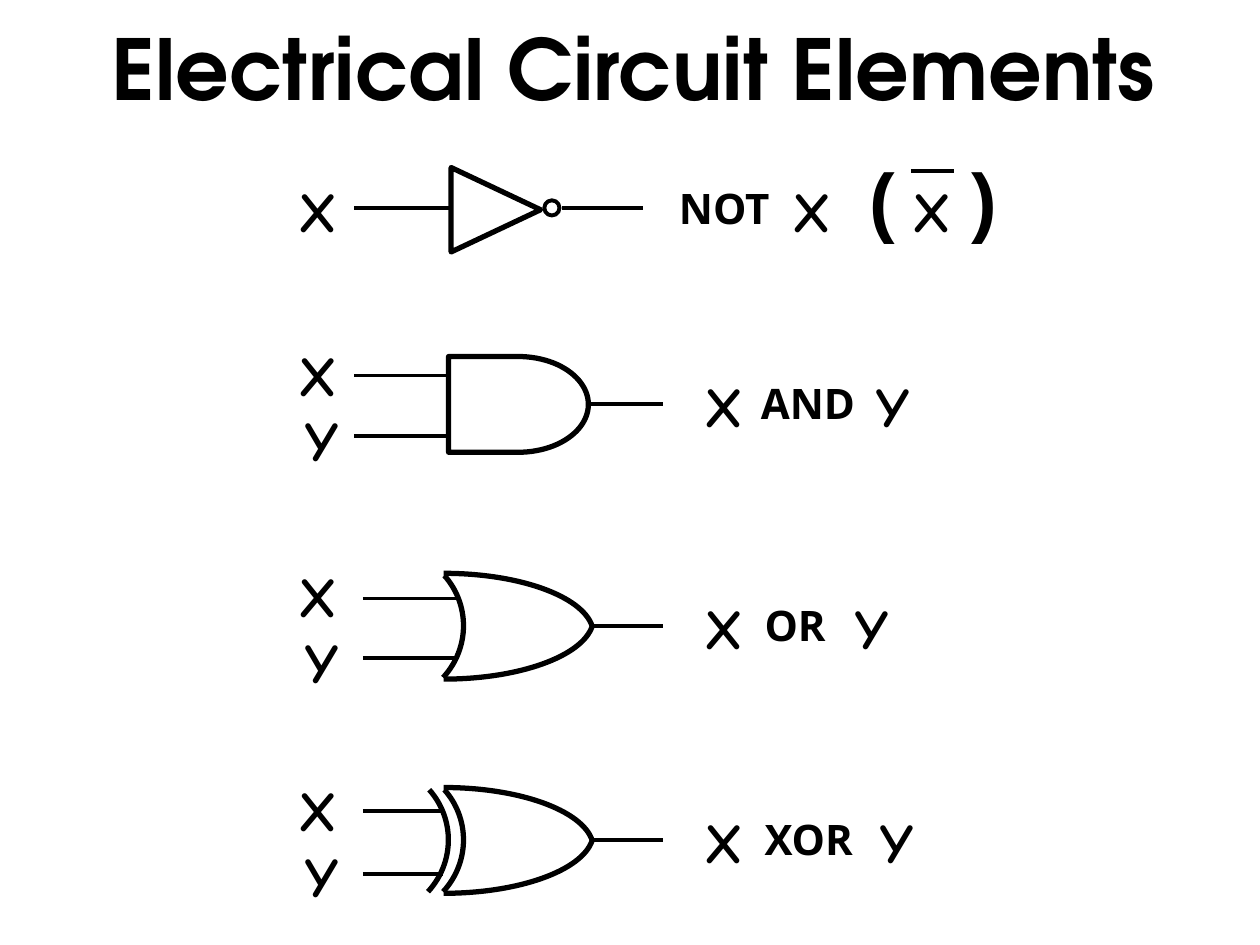
import pptx
import pptx.dml.color
import pptx.enum.shapes
import pptx.enum.text
import pptx.util
from lxml import etree

PX = 9144  # EMU per px, 100 px to the inch
BLACK = "000000"
SHAPES = pptx.enum.shapes.MSO_SHAPE
DRAWING = "http://schemas.openxmlformats.org/drawingml/2006/main"


def color(hex_text):
    return pptx.dml.color.RGBColor.from_string(hex_text)


def write_text(frame, text, *, font, size, align=None):
    paragraph = frame.paragraphs[0]
    paragraph.alignment = align
    run = paragraph.add_run()
    run.text = text
    run.font.name = font
    run.font.size = pptx.util.Pt(size)
    run.font.bold = True
    run.font.color.rgb = color(BLACK)


def add_node(parent, name, **attributes):
    return etree.SubElement(parent, f"{{{DRAWING}}}{name}", **attributes)


class CircuitSlide:
    variable_font = "Comic Neue"
    operator_font = "Noto Sans"
    wire_width = 2.25
    gate_width = 3

    def __init__(self, slide):
        self.slide = slide

    def text(self, text, left, top, width, height, *, wrap=False, **style):
        box = self.slide.shapes.add_textbox(left * PX, top * PX, width * PX, height * PX)
        box.text_frame.word_wrap = wrap
        box.text_frame.auto_size = pptx.enum.text.MSO_AUTO_SIZE.SHAPE_TO_FIT_TEXT
        write_text(box.text_frame, text, **style)

    def variable(self, name, left, top):
        width = 52 if name == "X" else 48
        self.text(name, left, top, width, 63, font=self.variable_font, size=32)

    def operator(self, name, left, top, width):
        self.text(name, left, top, width, 50, font=self.operator_font, size=24)

    def outline(self, shape, width):
        shape.shadow.inherit = False
        shape.fill.background()
        shape.line.color.rgb = color(BLACK)
        shape.line.width = pptx.util.Pt(width)

    def group(self, *shapes):
        self.slide.shapes.add_group_shape(shapes=shapes)

    def gate(self, kind, left, top, width, height, *, line_width=gate_width, rotation=0):
        shape = self.slide.shapes.add_shape(
            kind, left * PX, top * PX, width * PX, height * PX)
        shape.rotation = rotation
        self.outline(shape, line_width)
        return shape

    def arc(self, start, control_1, control_2, end, corner, *, rotation=0):
        """A cubic arc; the corner closes its unstroked sector."""
        builder = self.slide.shapes.build_freeform(*start, scale=PX)
        builder.add_line_segments([end, corner], close=True)
        shape = builder.convert_to_shape()
        shape.rotation = rotation
        self.outline(shape, self.gate_width)

        left = min(start[0], end[0], corner[0])
        top = min(start[1], end[1], corner[1])
        path_list = shape._element.spPr.find(f".//{{{DRAWING}}}pathLst")
        path_list.clear()
        size = {"w": str(shape.width), "h": str(shape.height)}

        def add_step(path, name, *points):
            step = add_node(path, name)
            for x, y in points:
                add_node(step, "pt", x=str((x - left) * PX), y=str((y - top) * PX))

        for options in ({"fill": "none"}, {"stroke": "0"}):
            path = add_node(path_list, "path", **size, **options)
            add_step(path, "moveTo", start)
            add_step(path, "cubicBezTo", control_1, control_2, end)
            if "stroke" in options:
                add_step(path, "lnTo", corner)
                add_node(path, "close")
        return shape

    def back_arc(self, left, center):
        top = center - 33
        offsets = ((7, 0), (37, 4), (60, 30), (59, 62), (0, 59))
        return self.arc(*((left + x, top + y) for x, y in offsets), rotation=40.7)

    def or_gate(self, center):
        sides = [self.arc((352, center + side * 42), (412, center + side * 42),
                          (462, center + side * 24), (470, center),
                          (352, center - side * 6)) for side in (-1, 1)]
        return [*sides, self.back_arc(320, center)]

    def wire(self, start_x, end_x, y, *, source=None):
        line = self.slide.shapes.add_connector(
            pptx.enum.shapes.MSO_CONNECTOR.STRAIGHT,
            start_x * PX, y * PX, end_x * PX, y * PX)
        if source is not None:
            line.begin_connect(source, 3)
        line.line.color.rgb = color(BLACK)
        line.line.width = pptx.util.Pt(self.wire_width)
        add_node(line._element.spPr, "effectLst")

    def two_inputs(self, center, wire_start, wire_end, wire_heights):
        self.variable("X", 227, center - 56)
        self.variable("Y", 233, center - 4)
        for y in wire_heights:
            self.wire(wire_start, wire_end, y)

    def result(self, center, name, name_left, name_width, y_left):
        self.variable("X", 549, center - 31)
        self.operator(name, name_left, center - 26, name_width)
        self.variable("Y", y_left, center - 31)


def main():
    presentation = pptx.Presentation()
    presentation.slide_width = 1000 * PX
    presentation.slide_height = 750 * PX
    circuit = CircuitSlide(presentation.slides.add_slide(presentation.slide_layouts[6]))

    # Title
    circuit.text("Electrical Circuit Elements", 5, 8, 995, 90, wrap=True,
                 font="TeX Gyre Adventor", size=48,
                 align=pptx.enum.text.PP_ALIGN.CENTER)

    # NOT gate, with the overlined X in brackets
    circuit.group(
        circuit.gate(SHAPES.FLOWCHART_EXTRACT, 360, 131, 67, 71, rotation=90),
        circuit.gate(SHAPES.OVAL, 432, 159, 12, 12, line_width=circuit.wire_width))
    circuit.wire(281, 356, 165)
    circuit.wire(446, 510, 165)
    circuit.operator("NOT", 529, 140, 96)
    for left in (227, 619, 714):
        circuit.variable("X", left, 135)
    circuit.wire(723, 757, 136)
    for bracket, left in (("(", 680), (")", 761)):
        circuit.text(bracket, left, 115, 40, 83, font="Arial", size=44)

    # AND gate
    and_gate = circuit.gate(SHAPES.FLOWCHART_DELAY, 356, 283, 111, 76)
    circuit.two_inputs(321, 281, 356, (298, 346))
    circuit.wire(467, 526, 321, source=and_gate)
    circuit.result(321, "AND", 594, 97, 686)

    # OR gate
    circuit.group(*circuit.or_gate(497))
    circuit.two_inputs(497, 288, 362, (475, 522))
    circuit.wire(468, 526, 497)
    circuit.result(497, "OR", 597, 70, 669)

    # XOR gate: an OR gate with a second back arc
    circuit.or_gate(667)
    circuit.back_arc(308, 667)
    circuit.two_inputs(667, 288, 352, (644, 694))
    circuit.wire(468, 526, 667)
    circuit.result(667, "XOR", 597, 93, 689)

    presentation.save("out.pptx")


if __name__ == "__main__":
    main()
